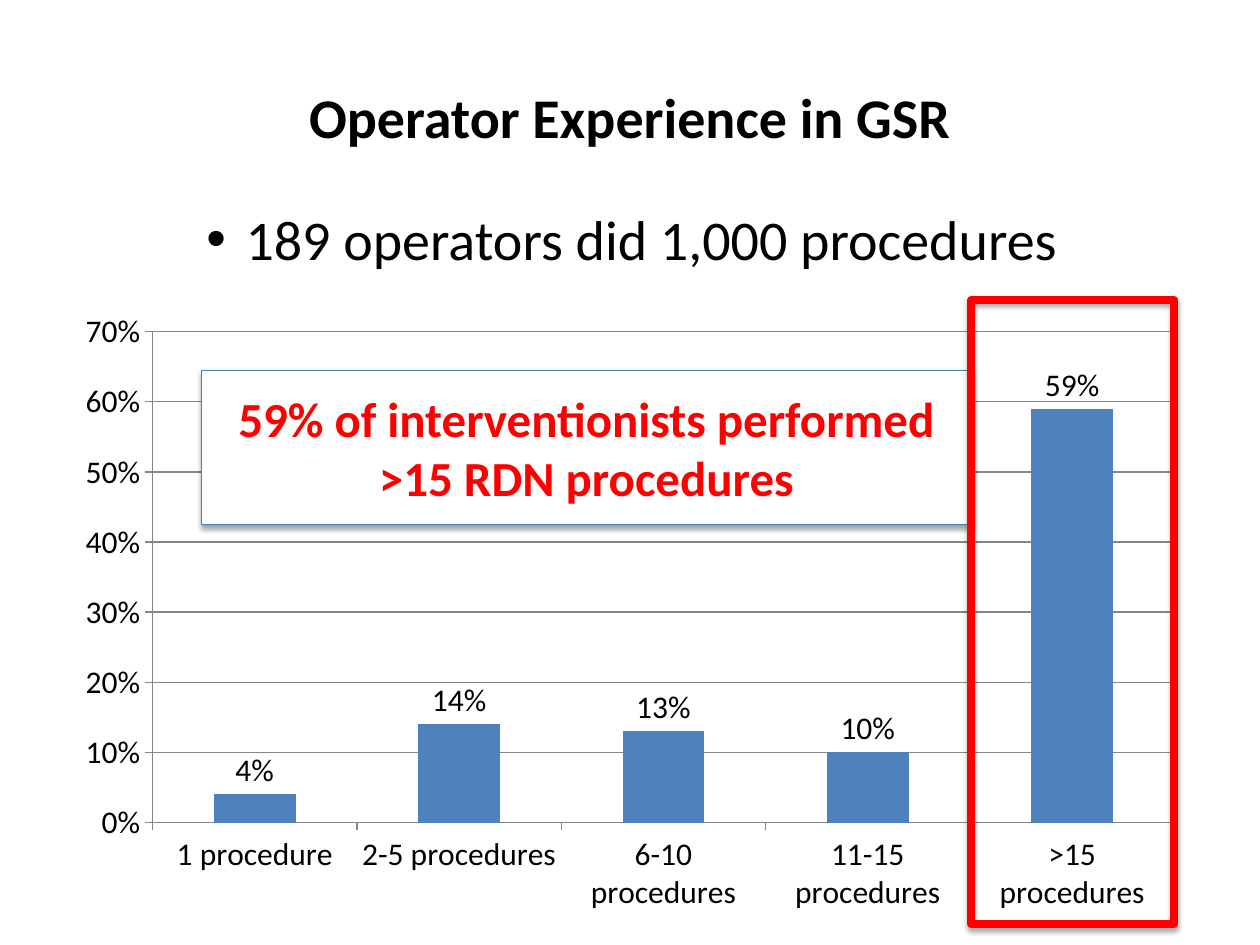
from dataclasses import dataclass

from lxml.etree import SubElement
from pptx import Presentation
from pptx.chart.data import CategoryChartData
from pptx.dml.color import RGBColor
from pptx.enum.chart import XL_CHART_TYPE as ChartType
from pptx.enum.chart import XL_LABEL_POSITION as LabelPosition
from pptx.enum.chart import XL_TICK_MARK as TickMark
from pptx.enum.shapes import MSO_SHAPE as Shape
from pptx.enum.text import MSO_ANCHOR as Anchor
from pptx.enum.text import PP_ALIGN as Align
from pptx.oxml.ns import qn
from pptx.slide import Slide
from pptx.util import Cm, Pt

BLACK = RGBColor(0x00, 0x00, 0x00)
WHITE = RGBColor(0xFF, 0xFF, 0xFF)
RED = RGBColor(0xFF, 0x00, 0x00)
BLUE = RGBColor(0x4F, 0x81, 0xBD)
EDGE_BLUE = RGBColor(0x4B, 0x7E, 0xBC)
GRAY = RGBColor(0x86, 0x86, 0x86)

CHART_TOP, CHART_HEIGHT = 6.05, 12.57
EXPERIENCE = {
    "1 procedure": 0.04,
    "2-5 procedures": 0.14,
    "6-10 procedures": 0.13,
    "11-15 procedures": 0.10,
    ">15 procedures": 0.59,
}


@dataclass
class SlideBuilder:
    slide: Slide
    font: str = "Calibri"

    def style_font(self, font, size, color, bold=False):
        font.name, font.size, font.bold = self.font, Pt(size), bold
        font.color.rgb = color

    def set_text(self, shape, text, size, color, bold=False, align=Align.CENTER, wrap=True):
        frame = shape.text_frame
        frame.text = text
        frame.word_wrap = wrap
        para = frame.paragraphs[0]
        para.alignment = align
        self.style_font(para.runs[0].font, size, color, bold)
        return para

    def title(self, text, *place):
        box = self.slide.shapes.add_textbox(*map(Cm, place))
        self.set_text(box, text, 32, BLACK, bold=True)
        box.text_frame.vertical_anchor = Anchor.MIDDLE

    def bullet(self, text, *place):
        box = self.slide.shapes.add_textbox(*map(Cm, place))
        para = self.set_text(box, text, 32, BLACK, align=Align.LEFT, wrap=False)
        properties = para._p.get_or_add_pPr()
        properties.set("marL", str(Cm(0.79)))
        properties.set("indent", str(-Cm(0.79)))
        SubElement(properties, qn("a:buFont"), typeface="Arial")
        SubElement(properties, qn("a:buChar"), char="•")

    def column_chart(self, values, *place):
        data = CategoryChartData(number_format="0%")
        data.categories = list(values)
        data.add_series("Series 1", list(values.values()))
        chart = self.slide.shapes.add_chart(
            ChartType.COLUMN_CLUSTERED, *map(Cm, place), data).chart
        chart.has_legend = chart.has_title = False
        self.style_font(chart.font, 18, BLACK)

        plot = chart.plots[0]
        plot.gap_width, plot.vary_by_categories = 150, False
        fill = plot.series[0].format.fill
        fill.solid()
        fill.fore_color.rgb = BLUE
        plot.has_data_labels = True
        labels = plot.data_labels
        labels.show_value, labels.position = True, LabelPosition.OUTSIDE_END
        labels.number_format, labels.number_format_is_linked = "0%", False

        scale = chart.value_axis
        scale.minimum_scale, scale.maximum_scale, scale.major_unit = 0, 0.7, 0.1
        scale.tick_labels.number_format = "0%"
        scale.tick_labels.number_format_is_linked = False
        scale.has_major_gridlines = True
        for axis in (scale, chart.category_axis):
            axis.major_tick_mark = TickMark.OUTSIDE
        for part in (scale, chart.category_axis, scale.major_gridlines):
            part.format.line.color.rgb = GRAY
            part.format.line.width = Pt(0.75)

    def frame(self, line_color, line_width, *place, fill=None):
        """Draw a rectangle with a soft shadow below it; no fill leaves it open."""
        shape = self.slide.shapes.add_shape(Shape.RECTANGLE, *map(Cm, place))
        if fill is None:
            shape.fill.background()
        else:
            shape.fill.solid()
            shape.fill.fore_color.rgb = fill
        shape.line.color.rgb, shape.line.width = line_color, Pt(line_width)
        shape.shadow.inherit = False
        effects = shape._element.spPr.find(qn("a:effectLst"))
        shadow = SubElement(effects, qn("a:outerShdw"), blurRad=str(Pt(3.1)),
                            dist=str(Pt(1.8)), dir="5400000", rotWithShape="0")
        color = SubElement(shadow, qn("a:srgbClr"), val=str(BLACK))
        SubElement(color, qn("a:alpha"), val="35000")
        return shape

    def callout(self, text, *place):
        shape = self.frame(EDGE_BLUE, 0.75, *place, fill=WHITE)
        self.set_text(shape, text, 28, RED, bold=True)
        shape.text_frame.vertical_anchor = Anchor.MIDDLE


def main():
    deck = Presentation()
    deck.slide_width, deck.slide_height = Cm(25.4), Cm(19.05)
    page = SlideBuilder(deck.slides.add_slide(deck.slide_layouts[6]))
    page.title("Operator Experience in GSR", 1.27, 0.76, 22.86, 3.18)
    page.column_chart(EXPERIENCE, 1.27, CHART_TOP, 22.86, CHART_HEIGHT)
    page.callout("59% of interventionists performed >15 RDN procedures",
                 4.06, 7.47, 15.52, 3.1)
    page.bullet("189 operators did 1,000 procedures", 3.91, 3.99, 17.86, 3)
    page.frame(RED, 4.5, 19.58, CHART_TOP, 4.09, CHART_HEIGHT)
    deck.save("out.pptx")


if __name__ == "__main__":
    main()
